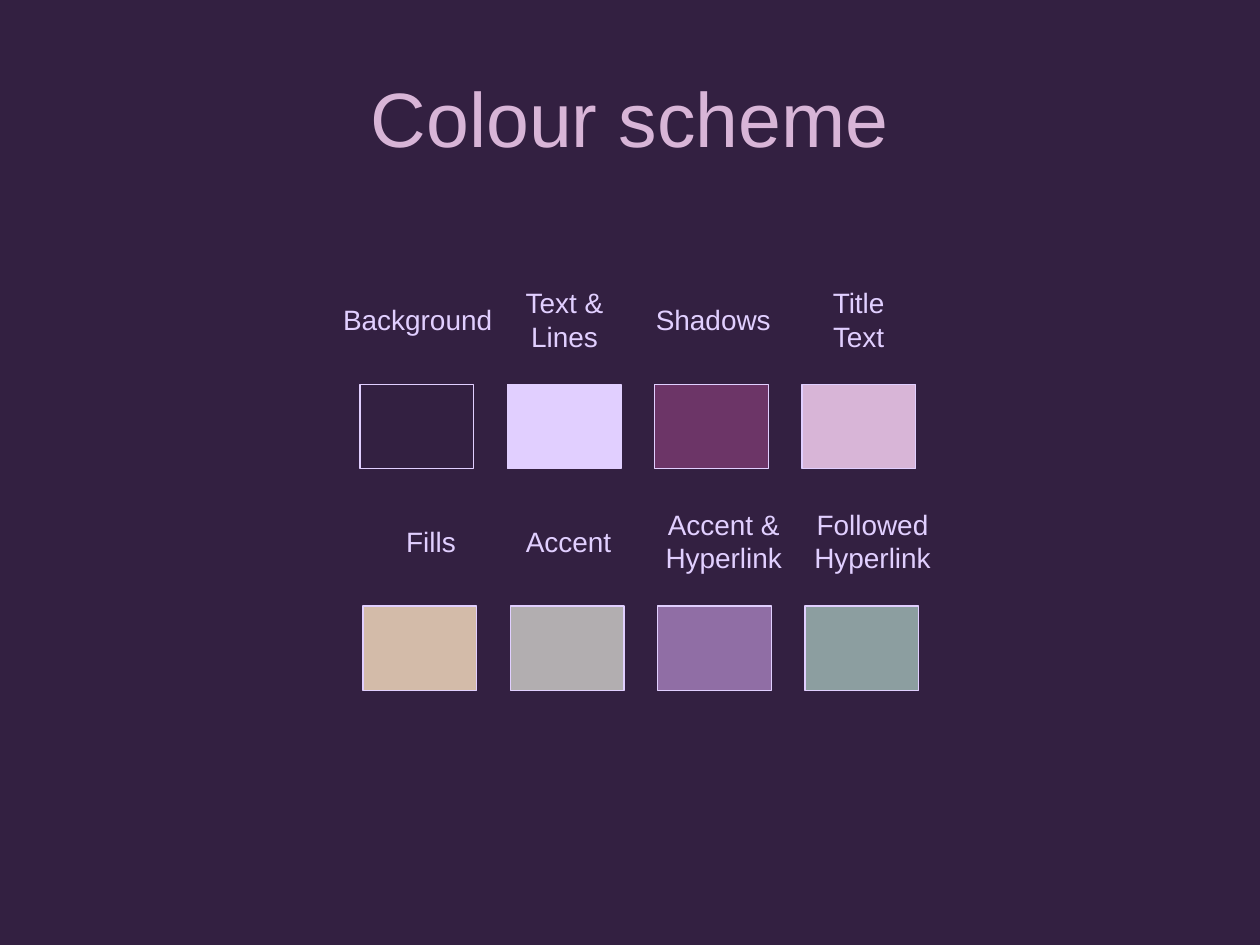
"""Build the colour scheme slide: a title and two rows of labelled swatches."""
from pptx import Presentation
from pptx.dml.color import RGBColor
from pptx.enum import shapes, text
from pptx.util import Cm, Pt

BACKGROUND, LINES, TITLE = "332041", "E1CFFF", "D8B5D7"


def colour(hex_string):
    return RGBColor.from_string(hex_string)


def format_text(text_frame, size, hex_string):
    for paragraph in text_frame.paragraphs:
        paragraph.alignment = text.PP_ALIGN.CENTER
        for run in paragraph.runs:
            run.font.name = "Arial"
            run.font.size = Pt(size)
            run.font.color.rgb = colour(hex_string)


presentation = Presentation()
presentation.slide_width, presentation.slide_height = Cm(25.4), Cm(19.05)
slide = presentation.slides.add_slide(presentation.slide_layouts[5])
slide.background.fill.solid()
slide.background.fill.fore_color.rgb = colour(BACKGROUND)

title = slide.shapes.title
title.left, title.top, title.width, title.height = Cm(1.27), Cm(0.76), Cm(22.86), Cm(3.18)
title.text_frame.text = "Colour scheme"
title.text_frame.vertical_anchor = text.MSO_ANCHOR.MIDDLE
format_text(title.text_frame, 44, TITLE)

swatch_width, swatch_height, swatch_step = 2.29, 1.7, 2.97
rows = [
    (7.26, 7.75, [
        ("Background", BACKGROUND, 8.42, 3.53),
        ("Text &\nLines", LINES, 11.38, 2.13),
        ("Shadows", "6C3567", 14.38, 2.84),
        ("Title\vText", TITLE, 17.31, 1.6),
    ]),
    (7.32, 12.22, [
        ("Fills", "D3BBA9", 8.69, 1.52),
        ("Accent", "B2AEB0", 11.46, 2.24),
        ("Accent &\nHyperlink", "906EA5", 14.59, 2.87),
        ("Followed\nHyperlink", "8C9EA0", 17.59, 2.87),
    ]),
]

for row_left, row_top, swatches in rows:
    label_middle = row_top - 1.3
    for column, (name, fill, label_centre, label_width) in enumerate(swatches):
        swatch = slide.shapes.add_shape(
            shapes.MSO_SHAPE.RECTANGLE, Cm(row_left + column * swatch_step), Cm(row_top),
            Cm(swatch_width), Cm(swatch_height))
        swatch.shadow.inherit = False
        swatch.fill.solid()
        swatch.fill.fore_color.rgb = colour(fill)
        swatch.line.color.rgb = colour(LINES)
        swatch.line.width = Pt(0.75)

        label_height = 0.94 if len(name.splitlines()) == 1 else 1.63
        label = slide.shapes.add_textbox(
            Cm(label_centre - label_width / 2), Cm(label_middle - label_height / 2),
            Cm(label_width), Cm(label_height))
        label.text_frame.text = name
        label.text_frame.word_wrap = False
        label.text_frame.auto_size = text.MSO_AUTO_SIZE.SHAPE_TO_FIT_TEXT
        format_text(label.text_frame, 16, LINES)

presentation.save("out.pptx")
